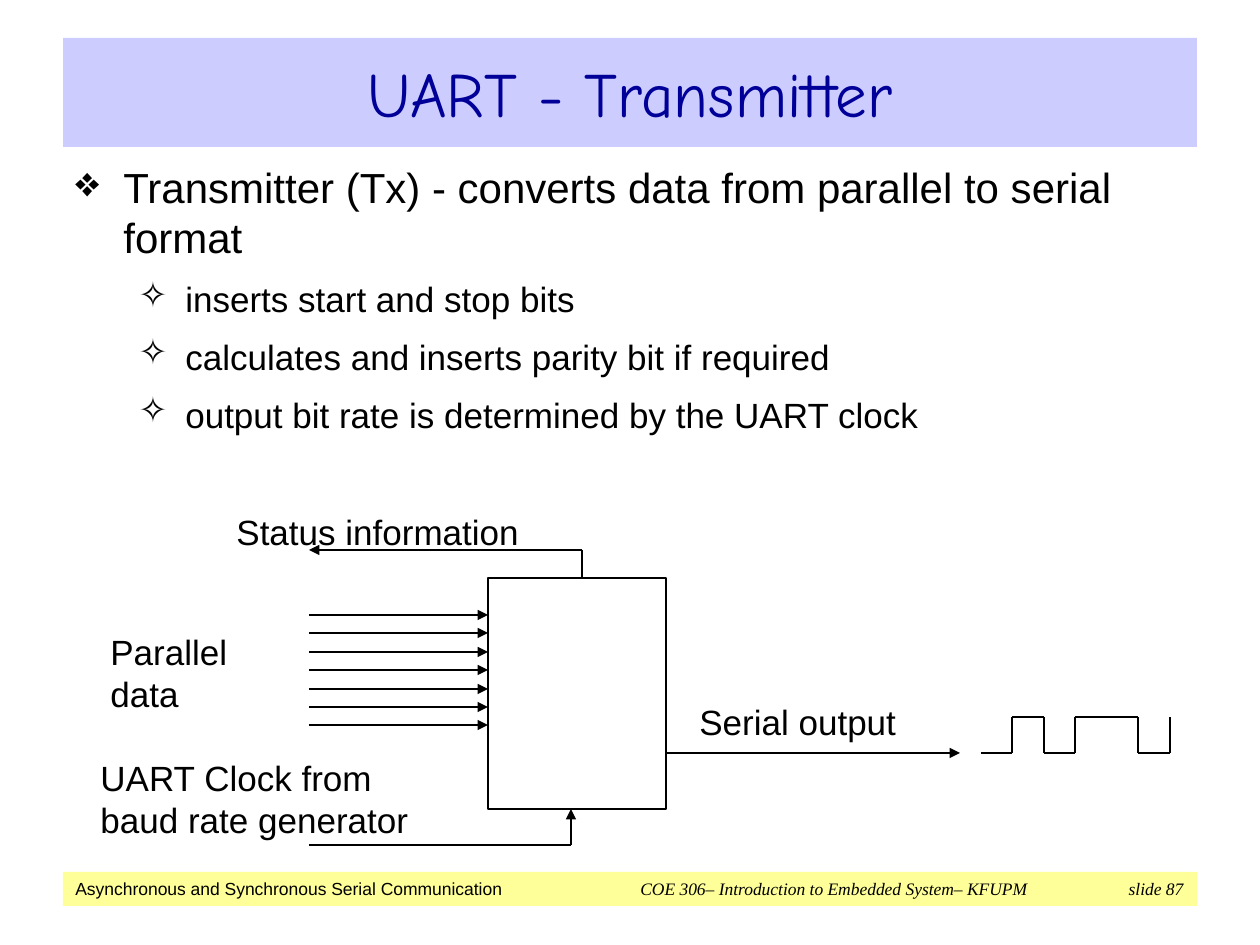
from dataclasses import dataclass
from itertools import pairwise

from lxml.etree import SubElement
from pptx import Presentation
from pptx.dml.color import RGBColor
from pptx.enum.shapes import MSO_CONNECTOR as CONN, MSO_SHAPE as SHAPE
from pptx.enum.text import MSO_ANCHOR as ANCHOR, PP_ALIGN as ALIGN
from pptx.oxml.ns import qn
from pptx.util import Emu, Pt

COLORS = {"ink": "000000", "title": "000099", "band": "CCCCFF", "footer": "FFFF99"}


@dataclass(frozen=True)
class Box:
    x: int
    y: int
    w: int
    h: int


@dataclass(frozen=True)
class Wire:
    x1: int
    y1: int
    x2: int
    y2: int
    arrow: bool = False


@dataclass(frozen=True)
class Label:
    text: str
    box: Box


@dataclass(frozen=True)
class Bullet:
    char: str
    size: int
    margin: int
    hang: int


TITLE_BOX = Box(63, 38, 1134, 109)
BODY_BOX = Box(63, 155, 1134, 708)
FOOTER_BOX = Box(63, 872, 1134, 34)
BLOCK = Box(488, 578, 178, 231)

MAIN = Bullet("❖", 24, 48, 48)
SUB = Bullet("✧", 20, 110, 47)
POINTS = [
    (MAIN, "Transmitter (Tx) - converts data from parallel to serial format"),
    (SUB, "inserts start and stop bits"),
    (SUB, "calculates and inserts parity bit if required"),
    (SUB, "output bit rate is determined by the UART clock"),
]

LABELS = [
    Label("Serial output", Box(687, 694, 262, 48)),
    Label("Parallel data", Box(98, 624, 189, 84)),
    Label("UART Clock from\vbaud rate generator", Box(88, 750, 399, 84)),
    Label("Status information", Box(224, 504, 420, 48)),
]

LEFT_END = 309
BLOCK_RIGHT, BLOCK_BOTTOM = BLOCK.x + BLOCK.w, BLOCK.y + BLOCK.h
LOW, HIGH = 753, 717
BITS = [0, 1, 0, 1, 1, 0, 1]  # the last bit shows only its rising edge


def px(n: int) -> Emu:
    return Emu(round(n * 914400 / 126))


def rgb(name: str) -> RGBColor:
    return RGBColor.from_string(COLORS[name])


def place(sp, box: Box) -> None:
    sp.left, sp.top, sp.width, sp.height = map(px, (box.x, box.y, box.w, box.h))


def write(p, text: str, *, size: int, font: str = "Arial", color: str = "ink",
          italic: bool = False) -> None:
    """Add text to a paragraph; a vertical tab makes a line break."""
    for i, line in enumerate(text.split("\v")):
        if i:
            p.add_line_break()
        r = p.add_run()
        r.text = line
        r.font.size, r.font.name, r.font.italic = Pt(size), font, italic
        r.font.color.rgb = rgb(color)


def add_rect(slide, box: Box, fill: str | None = None, line: str | None = None):
    sp = slide.shapes.add_shape(SHAPE.RECTANGLE, *map(px, (box.x, box.y, box.w, box.h)))
    sp.shadow.inherit = False
    if fill:
        sp.fill.solid()
        sp.fill.fore_color.rgb = rgb(fill)
    else:
        sp.fill.background()
    if line:
        sp.line.color.rgb = rgb(line)
        sp.line.width = Pt(0.75)
    else:
        sp.line.fill.background()
    return sp


def add_text_frame(slide, box: Box):
    tf = slide.shapes.add_textbox(*map(px, (box.x, box.y, box.w, box.h))).text_frame
    tf.word_wrap = True
    return tf


def add_wire(slide, wire: Wire) -> None:
    ends = map(px, (wire.x1, wire.y1, wire.x2, wire.y2))
    cxn = slide.shapes.add_connector(CONN.STRAIGHT, *ends)
    cxn.line.color.rgb = rgb("ink")
    cxn.line.width = Pt(0.75)
    if wire.arrow:
        SubElement(cxn.line._get_or_add_ln(), qn("a:tailEnd"), type="triangle")
    SubElement(cxn._element.spPr, qn("a:effectLst"))


def set_bullet(p, bullet: Bullet) -> None:
    pPr = p._p.get_or_add_pPr()
    pPr.set("marL", str(px(bullet.margin)))
    pPr.set("indent", str(-px(bullet.hang)))
    SubElement(pPr, qn("a:buChar"), char=bullet.char)


def set_tabs(p, *stops: tuple[int, str]) -> None:
    tabs = SubElement(p._p.get_or_add_pPr(), qn("a:tabLst"))
    for pos, align in stops:
        SubElement(tabs, qn("a:tab"), pos=str(px(pos)), algn=align)


def add_footer(slide) -> None:
    tf = add_rect(slide, FOOTER_BOX, fill="footer").text_frame
    tf.vertical_anchor = ANCHOR.MIDDLE
    tf.word_wrap = True
    p = tf.paragraphs[0]
    p.alignment = ALIGN.LEFT
    set_tabs(p, (565, "l"), (1108, "r"))
    write(p, "Asynchronous and Synchronous Serial Communication", size=10)
    write(p, "\tCOE 306– Introduction to Embedded System– KFUPM\tslide 87",
          size=10, font="Times New Roman", italic=True)


def add_title(slide) -> None:
    title = slide.shapes.title
    place(title, TITLE_BOX)
    title.fill.solid()
    title.fill.fore_color.rgb = rgb("band")
    tf = title.text_frame
    tf.vertical_anchor = ANCHOR.MIDDLE
    tf.paragraphs[0].alignment = ALIGN.CENTER
    write(tf.paragraphs[0], "UART - Transmitter", size=36, font="Comic Neue", color="title")


def add_body(slide) -> None:
    tf = add_text_frame(slide, BODY_BOX)
    for i, (bullet, text) in enumerate(POINTS):
        p = tf.add_paragraph() if i else tf.paragraphs[0]
        p.level = int(bullet is SUB)
        p.space_before = Pt(9)
        set_bullet(p, bullet)
        write(p, text, size=bullet.size)


def block_wires() -> list[Wire]:
    data = [Wire(LEFT_END, 615 + round(i * 18.4), BLOCK.x, 615 + round(i * 18.4), True)
            for i in range(7)]
    status = [Wire(582, 550, LEFT_END, 550, True), Wire(582, 550, 582, BLOCK.y)]
    clock = [Wire(571, 845, 571, BLOCK_BOTTOM, True), Wire(571, 845, LEFT_END, 845)]
    return data + status + clock + [Wire(BLOCK_RIGHT, LOW, 960, LOW, True)]


def waveform_wires() -> list[Wire]:
    """One level line per bit, and an edge wherever the next bit differs."""
    wires = []
    for i, (bit, after) in enumerate(pairwise(BITS)):
        x1, x2 = (981 + 63 * n // 2 for n in (i, i + 1))
        y = HIGH if bit else LOW
        wires.append(Wire(x1, y, x2, y))
        if bit != after:
            wires.append(Wire(x2, LOW, x2, HIGH))
    return wires


def main() -> None:
    prs = Presentation()
    prs.slide_width, prs.slide_height = px(1260), px(945)
    slide = prs.slides.add_slide(prs.slide_layouts[5])
    add_footer(slide)
    add_title(slide)
    add_body(slide)
    add_rect(slide, BLOCK, line="ink")
    for wire in block_wires() + waveform_wires():
        add_wire(slide, wire)
    for label in LABELS:
        write(add_text_frame(slide, label.box).paragraphs[0], label.text, size=20)
    prs.save("out.pptx")


if __name__ == "__main__":
    main()
